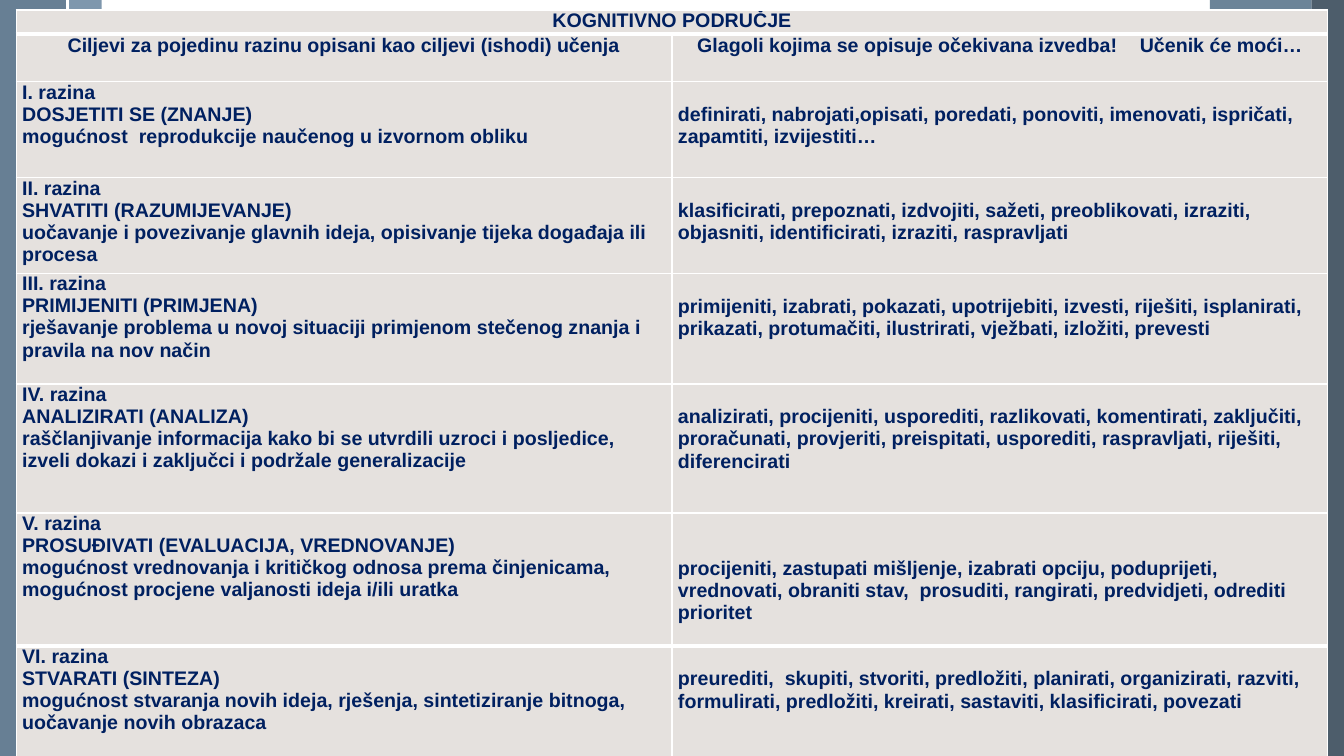
"""Build the slide on learning levels of the cognitive domain."""
from dataclasses import dataclass

from lxml.etree import SubElement as Sub
from pptx import Presentation
from pptx.dml.color import RGBColor
from pptx.enum.shapes import MSO_CONNECTOR as Link, MSO_SHAPE as Kind
from pptx.enum.text import PP_ALIGN as Align
from pptx.oxml.ns import qn
from pptx.util import Inches, Pt

WHITE = RGBColor(0xFF, 0xFF, 0xFF)
NAVY = RGBColor(0x00, 0x20, 0x60)
SAND = RGBColor(0xE5, 0xE1, 0xDE)
STEEL = RGBColor(0x7E, 0x97, 0xAD)
SLATE = RGBColor(0x57, 0x72, 0x89)
DARK = RGBColor(0x3A, 0x4C, 0x5B)

HIGH = 7.5
LINE = 0.22
WIDE = 3
THIN = 1


@dataclass
class Band:
    left: float
    width: float
    fill: RGBColor
    alpha: int


@dataclass
class Level:
    high: float
    name: str
    title: str
    goal: str
    verbs: str
    skip: int = 1


BANDS = [
    Band(0.68, 0.33, STEEL, 100),
    Band(0, 0.67, SLATE, 90),
    Band(12, 1.01, SLATE, 87),
    Band(13.01, 0.33, DARK, 90),
]

LEVELS = [
    Level(0.95, "I. razina", "DOSJETITI SE (ZNANJE)",
          "mogućnost  reprodukcije naučenog u izvornom obliku",
          "definirati, nabrojati,opisati, poredati, ponoviti, imenovati, "
          "ispričati, zapamtiti, izvijestiti…"),
    Level(0.95, "II. razina", "SHVATITI (RAZUMIJEVANJE)",
          "uočavanje i povezivanje glavnih ideja, opisivanje tijeka "
          "događaja ili procesa",
          "klasificirati, prepoznati, izdvojiti, sažeti, preoblikovati, "
          "izraziti, objasniti, identificirati, izraziti, raspravljati"),
    Level(1.1, "III. razina", "PRIMIJENITI (PRIMJENA)",
          "rješavanje problema u novoj situaciji primjenom stečenog "
          "znanja i pravila na nov način",
          "primijeniti, izabrati, pokazati, upotrijebiti, izvesti, "
          "riješiti, isplanirati, prikazati, protumačiti, ilustrirati, "
          "vježbati, izložiti, prevesti"),
    Level(1.28, "IV. razina", "ANALIZIRATI (ANALIZA)",
          "raščlanjivanje informacija kako bi se utvrdili uzroci i "
          "posljedice, izveli dokazi i zaključci i podržale generalizacije",
          "analizirati, procijeniti, usporediti, razlikovati, komentirati, "
          "zaključiti, proračunati, provjeriti, preispitati, usporediti, "
          "raspravljati, riješiti, diferencirati"),
    Level(1.32, "V. razina", "PROSUĐIVATI (EVALUACIJA, VREDNOVANJE)",
          "mogućnost vrednovanja i kritičkog odnosa prema činjenicama, "
          "mogućnost procjene valjanosti ideja i/ili uratka",
          "procijeniti, zastupati mišljenje, izabrati opciju, poduprijeti, "
          "vrednovati, obraniti stav,  prosuditi, rangirati, predvidjeti, "
          "odrediti prioritet", 2),
    Level(1.1, "VI. razina", "STVARATI (SINTEZA)",
          "mogućnost stvaranja novih ideja, rješenja, sintetiziranje "
          "bitnoga, uočavanje novih obrazaca",
          "preurediti,  skupiti, stvoriti, predložiti, planirati, "
          "organizirati, razviti, formulirati, predložiti, kreirati, "
          "sastaviti, klasificirati, povezati"),
]


def add_band(slide, band: Band) -> None:
    shape = slide.shapes.add_shape(
        Kind.RECTANGLE, Inches(band.left), 0, Inches(band.width), Inches(HIGH))
    shape.shadow.inherit = False
    shape.line.fill.background()
    shape.fill.solid()
    shape.fill.fore_color.rgb = band.fill
    if band.alpha < 100:
        color = shape.element.spPr.find(qn("a:solidFill"))[0]
        Sub(color, qn("a:alpha"), val=str(band.alpha * 1000))


def add_rule(slide, left: float) -> None:
    rule = slide.shapes.add_connector(
        Link.STRAIGHT, Inches(left), 0, Inches(left), Inches(HIGH))
    rule.line.color.rgb = WHITE
    rule.line.width = Pt(1.5)
    Sub(rule.element.spPr, qn("a:effectLst"))


def style_cell(cell, top: int, base: int) -> None:
    props = cell._tc.get_or_add_tcPr()
    for side, width in zip("LRTB", (THIN, THIN, top, base)):
        edge = Sub(props, qn(f"a:ln{side}"), w=str(Pt(width)))
        Sub(Sub(edge, qn("a:solidFill")), qn("a:srgbClr"), val=str(WHITE))
    cell.fill.solid()
    cell.fill.fore_color.rgb = SAND
    cell.margin_left = cell.margin_right = Inches(0.06)
    cell.margin_top = cell.margin_bottom = 0


def add_run(para, text: str, gap: float = 0) -> None:
    run = para.add_run()
    run.text = text
    font = run.font
    font.name, font.size, font.bold = "Arial", Pt(14), True
    font.color.rgb = NAVY
    if gap:
        run._r.get_or_add_rPr().set("spc", str(round(gap * 100)))


def write(cell, lines: list[str], align=Align.LEFT, skip: int = 0) -> None:
    cell.margin_top = Inches(LINE * skip)
    frame = cell.text_frame
    for spot, line in enumerate(lines):
        para = frame.add_paragraph() if spot else frame.paragraphs[0]
        para.alignment = align
        add_run(para, line)


def add_grid(slide) -> None:
    highs = [0.24, 0.47] + [level.high for level in LEVELS]
    count = len(highs)
    frame = slide.shapes.add_table(
        count, 2, Inches(0.16), Inches(0.1), Inches(13.01), Inches(sum(highs)))
    grid = frame.table
    grid.first_row = grid.horz_banding = False
    thick = {1, count - 1}
    for row, high in enumerate(highs):
        grid.rows[row].height = Inches(high)
        for col in range(2):
            style_cell(grid.cell(row, col),
                       WIDE if row in thick else THIN,
                       WIDE if row + 1 in thick else THIN)
    grid.cell(0, 0).merge(grid.cell(0, 1))
    write(grid.cell(0, 0), ["KOGNITIVNO PODRUČJE"], Align.CENTER)
    write(grid.cell(1, 0),
          ["Ciljevi za pojedinu razinu opisani kao ciljevi (ishodi) učenja"],
          Align.CENTER)
    verbs = grid.cell(1, 1)
    write(verbs, ["Glagoli kojima se opisuje očekivana izvedba!"], Align.CENTER)
    para = verbs.text_frame.paragraphs[0]
    add_run(para, " ", 11.7)
    add_run(para, "Učenik će moći…")
    for row, level in enumerate(LEVELS, 2):
        write(grid.cell(row, 0), [level.name, level.title, level.goal])
        write(grid.cell(row, 1), [level.verbs], skip=level.skip)


def main() -> None:
    deck = Presentation()
    deck.slide_width, deck.slide_height = Inches(13.33), Inches(HIGH)
    slide = deck.slides.add_slide(deck.slide_layouts[6])
    for band in BANDS:
        add_band(slide, band)
    add_rule(slide, 0.67)
    add_grid(slide)
    deck.save("out.pptx")


if __name__ == "__main__":
    main()
